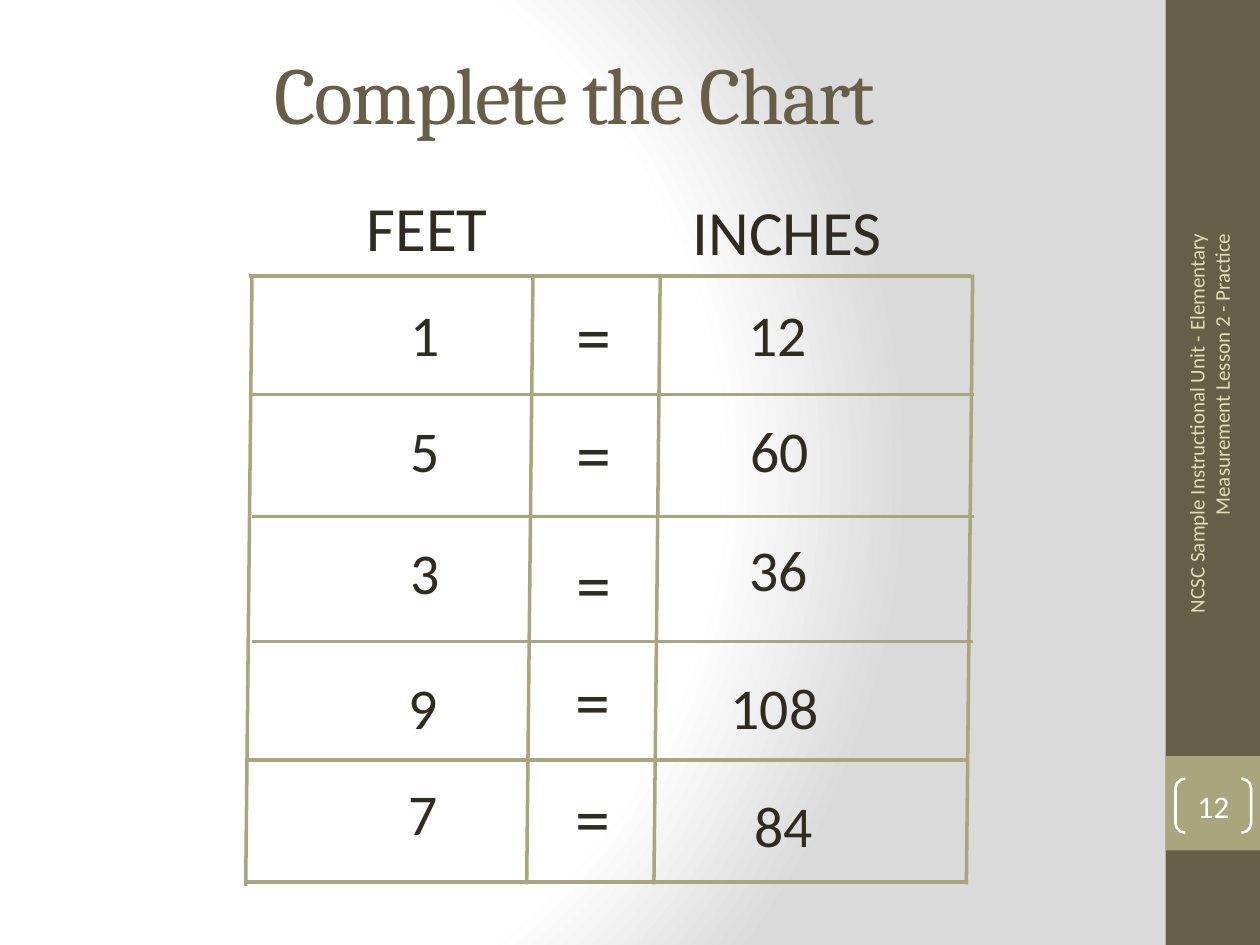
from dataclasses import dataclass

from lxml.etree import SubElement
from pptx import Presentation
from pptx.dml.color import RGBColor
from pptx.enum.shapes import MSO_CONNECTOR, MSO_SHAPE
from pptx.enum.text import MSO_ANCHOR, MSO_AUTO_SIZE, PP_ALIGN
from pptx.oxml.ns import qn
from pptx.util import Inches, Pt


@dataclass(frozen=True)
class Theme:
    brown: RGBColor = RGBColor(0x67, 0x5E, 0x47)
    olive: RGBColor = RGBColor(0xA9, 0xA5, 0x7C)
    ink: RGBColor = RGBColor(0x2F, 0x2B, 0x20)
    cream: RGBColor = RGBColor(0xDF, 0xDC, 0xB7)
    white: RGBColor = RGBColor(0xFF, 0xFF, 0xFF)
    heading_font: str = "Cambria"
    body_font: str = "Calibri"
    title: int = 46
    header: int = 36
    value: int = 33
    equals: int = 40
    footer: int = 12
    number: int = 18


T = Theme()

# Row values, each with the left and top of its box
FEET = [("1", 3.16, 2.32), ("5", 3.16, 3.24), ("3", 3.16, 4.21),
        ("9", 3.14, 5.28), ("7", 3.14, 6.12)]
INCHES = [("12", 5.84, 2.32), ("60", 5.86, 3.24), ("36", 5.85, 4.19),
          ("108", 5.7, 5.28), ("84", 5.89, 6.22)]
EQUALS = [(4.48, 2.27), (4.48, 3.21), (4.48, 4.24), (4.47, 5.17), (4.47, 6.1)]
VALUE_WIDTHS = {1: 0.44, 2: 0.67, 3: 0.91}

# Hand-drawn grid: left, right and height of rules; top x and span of columns
ROW_RULES = [(1.98, 7.71, 2.19), (2, 7.73, 3.13), (2, 7.73, 4.1),
             (2, 7.72, 5.09), (1.95, 7.67, 6.03), (1.95, 7.67, 7)]
COLUMN_RULES = [(2, 2.19, 7.03), (4.23, 2.18, 7.02),
                (5.24, 2.18, 7.02), (7.72, 2.18, 7.02)]
COLUMN_SLANT = 0.05


def set_background(s):
    """Radial gradient, white with a grey edge."""
    s.background.fill.gradient()
    grad = s.background._cSld.find(".//" + qn("a:gradFill"))
    for child in list(grad):
        grad.remove(child)
    stops = SubElement(grad, qn("a:gsLst"))
    for pos, color in ((0, "FFFFFF"), (75, "FFFFFF"), (100, "DADADA")):
        stop = SubElement(stops, qn("a:gs"), pos=str(pos * 1000))
        SubElement(stop, qn("a:srgbClr"), val=color)
    circle = SubElement(grad, qn("a:path"), path="circle")
    SubElement(circle, qn("a:fillToRect"),
               l="20000", t="50000", r="100000", b="50000")


def add_band(s, top, height, color):
    sp = s.shapes.add_shape(MSO_SHAPE.RECTANGLE, Inches(9.25), Inches(top),
                            Inches(0.75), Inches(height))
    sp.shadow.inherit = False
    sp.fill.solid()
    sp.fill.fore_color.rgb = color
    sp.line.fill.background()


def write(tf, text, size, color, font=T.body_font, align=None):
    p = tf.paragraphs[0]
    p.text = text
    p.alignment = align
    p.font.size = Pt(size)
    p.font.name = font
    p.font.color.rgb = color
    return p


def add_label(s, text, left, top, width, height, size):
    """Unwrapped text that fits its box."""
    sp = s.shapes.add_textbox(Inches(left), Inches(top),
                              Inches(width), Inches(height))
    tf = sp.text_frame
    tf.word_wrap = False
    tf.auto_size = MSO_AUTO_SIZE.SHAPE_TO_FIT_TEXT
    write(tf, text, size, T.ink)


def add_block(s, text, left, top, width, height, size, color, **style):
    """Wrapped text, centred vertically."""
    sp = s.shapes.add_textbox(Inches(left), Inches(top),
                              Inches(width), Inches(height))
    tf = sp.text_frame
    tf.word_wrap = True
    tf.vertical_anchor = MSO_ANCHOR.MIDDLE
    return sp, write(tf, text, size, color, **style)


def add_rule(s, x1, y1, x2, y2):
    line = s.shapes.add_connector(MSO_CONNECTOR.STRAIGHT, Inches(x1),
                                  Inches(y1), Inches(x2), Inches(y2))
    line.line.color.rgb = T.olive
    line.line.width = Pt(2)
    SubElement(line._element.spPr, qn("a:effectLst"))


def add_page_number(s, text):
    sp = s.shapes.add_shape(MSO_SHAPE.DOUBLE_BRACKET, Inches(9.33),
                            Inches(6.18), Inches(0.6), Inches(0.43))
    sp.adjustments[0] = 0.18
    sp.shadow.inherit = False
    sp.fill.background()
    sp.line.color.rgb = T.white
    sp.line.width = Pt(1.5)
    tf = sp.text_frame
    tf.margin_left = tf.margin_right = tf.margin_top = tf.margin_bottom = 0
    tf.vertical_anchor = MSO_ANCHOR.MIDDLE
    write(tf, text, T.number, T.white, align=PP_ALIGN.CENTER)


def main():
    prs = Presentation()
    prs.slide_width, prs.slide_height = Inches(10), Inches(7.5)
    s = prs.slides.add_slide(prs.slide_layouts[6])

    # Background and side bands
    set_background(s)
    add_band(s, 0, 7.5, T.brown)
    add_band(s, 6, 0.75, T.olive)

    # Title, slightly tightened
    _, p = add_block(s, "Complete the Chart", 2.08, 0.11, 6.01, 1.25,
                     T.title, T.brown, font=T.heading_font)
    p.runs[0].font._element.set("spc", "-100")

    # Grid
    for left, right, y in ROW_RULES:
        add_rule(s, left, y, right, y)
    for x, top, bottom in COLUMN_RULES:
        add_rule(s, x, top, x - COLUMN_SLANT, bottom)

    # Column headers and values
    add_label(s, "FEET", 2.81, 1.45, 1.17, 0.71, T.header)
    add_label(s, "INCHES", 5.4, 1.48, 1.72, 0.71, T.header)
    for text, left, top in FEET + INCHES:
        add_label(s, text, left, top, VALUE_WIDTHS[len(text)], 0.66, T.value)
    for left, top in EQUALS:
        add_label(s, "=", left, top, 0.48, 0.77, T.equals)

    # Side footer and page number
    sp, _ = add_block(s, "NCSC Sample Instructional Unit - Elementary "
                      "Measurement Lesson 2 - Practice", 7.51, 3.64, 4.17, 0.4,
                      T.footer, T.cream, align=PP_ALIGN.RIGHT)
    sp.rotation = 270
    add_page_number(s, "12")

    prs.save("out.pptx")


if __name__ == "__main__":
    main()
